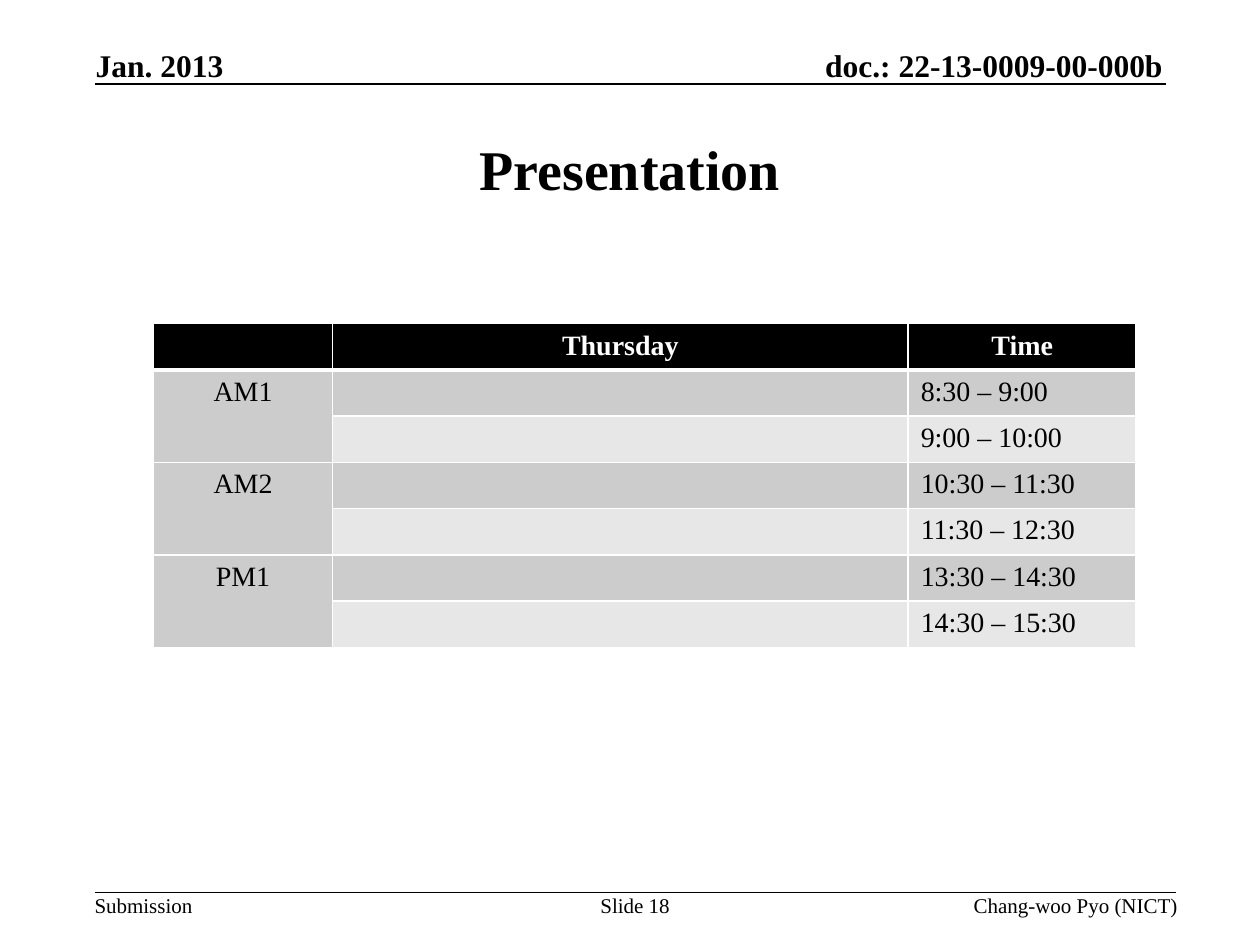
from lxml import etree
from pptx import Presentation
from pptx.dml.color import RGBColor
from pptx.enum.shapes import MSO_CONNECTOR
from pptx.enum.text import MSO_ANCHOR, PP_ALIGN
from pptx.oxml.ns import qn
from pptx.util import Pt

LEFT, MID, RIGHT = PP_ALIGN.LEFT, PP_ALIGN.CENTER, PP_ALIGN.RIGHT
TOP, CENTRE, BOTTOM = MSO_ANCHOR.TOP, MSO_ANCHOR.MIDDLE, MSO_ANCHOR.BOTTOM
LINE = MSO_CONNECTOR.STRAIGHT
FONT, BLACK, WHITE = "Times New Roman", "000000", "FFFFFF"
BANDS = ("CCCCCC", "E7E7E7")

# Content
TITLE = "Presentation"
HEAD = ("", "Thursday", "Time")
SLOTS = [
    ("AM1", ("8:30 – 9:00", "9:00 – 10:00")),
    ("AM2", ("10:30 – 11:30", "11:30 – 12:30")),
    ("PM1", ("13:30 – 14:30", "14:30 – 15:30")),
]
# text, left, top, width, height, size, bold, align, anchor
LABELS = [
    ("Jan. 2013", 54.7, 26.6, 75.6, 21.6, 18, True, LEFT, BOTTOM),
    ("doc.: 22-13-0009-00-000b", 433.4, 26.6, 231.1, 21.6, 18, True, RIGHT, BOTTOM),
    ("Submission", 54, 510, 56.2, 14.4, 12, False, LEFT, TOP),
    ("Slide 18", 342, 510, 41.8, 14.4, 12, False, MID, TOP),
    ("Chang-woo Pyo (NICT)", 555, 510, 118, 14.4, 12, False, RIGHT, TOP),
]
RULES = [(54, 666, 48), (54, 672, 510)]  # left, right, height on page
COLS = (102.2, 329, 130.3)
ROW = 25


def rgb(code):
    return RGBColor.from_string(code)


def style(para, size, color=BLACK, bold=False, align=LEFT):
    para.alignment = align
    for run in para.runs:
        font = run.font
        font.name, font.size, font.bold = FONT, Pt(size), bold
        font.color.rgb = rgb(color)


def edge(cell, side, width):
    props = cell._tc.get_or_add_tcPr()
    line = etree.SubElement(props, qn("a:ln" + side), w=str(Pt(width)))
    fill = etree.SubElement(line, qn("a:solidFill"))
    etree.SubElement(fill, qn("a:srgbClr"), val=WHITE)


def paint(cell, text, row, fill, align):
    for side in "LRTB":
        thick = (row, side) in ((0, "B"), (1, "T"))
        edge(cell, side, 3 if thick else 1)
    cell.fill.solid()
    cell.fill.fore_color.rgb = rgb(fill)
    cell.text = text
    para = cell.text_frame.paragraphs[0]
    style(para, 16, BLACK if row else WHITE, row == 0, align)
    if not text:  # keeps empty cells at the row's text size
        etree.SubElement(para._p, qn("a:endParaRPr"), sz="1600")


deck = Presentation()
deck.slide_width, deck.slide_height = Pt(720), Pt(540)
slide = deck.slides.add_slide(deck.slide_layouts[5])

# Title
title = slide.shapes.title
title.left, title.top, title.width, title.height = Pt(54), Pt(54), Pt(612), Pt(84)
title.text_frame.text = TITLE
title.text_frame.vertical_anchor = CENTRE
style(title.text_frame.paragraphs[0], 32, bold=True, align=MID)

# Header and footer
for text, x, y, w, h, size, bold, align, anchor in LABELS:
    frame = slide.shapes.add_textbox(Pt(x), Pt(y), Pt(w), Pt(h)).text_frame
    frame.margin_left = frame.margin_right = 0
    frame.margin_top = frame.margin_bottom = 0
    frame.word_wrap = False
    frame.vertical_anchor = anchor
    frame.text = text
    style(frame.paragraphs[0], size, bold=bold, align=align)

for x, end, y in RULES:
    rule = slide.shapes.add_connector(LINE, Pt(x), Pt(y), Pt(end), Pt(y))
    rule.line.color.rgb = rgb(BLACK)
    rule.line.width = Pt(1)
    etree.SubElement(rule._element.spPr, qn("a:effectLst"))

# Timetable
count = 1 + sum(len(times) for _, times in SLOTS)
table = slide.shapes.add_table(count, len(COLS), Pt(87.8), Pt(185),
                               Pt(sum(COLS)), Pt(ROW * count)).table
for col, width in zip(table.columns, COLS):
    col.width = Pt(width)
for line in table.rows:
    line.height = Pt(ROW)

for col, text in enumerate(HEAD):
    paint(table.cell(0, col), text, 0, BLACK, MID)

row = 1
for slot, times in SLOTS:
    first = row
    for time, band in zip(times, BANDS):
        paint(table.cell(row, 0), slot if row == first else "", row, BANDS[0], MID)
        paint(table.cell(row, 1), "", row, band, LEFT)
        paint(table.cell(row, 2), time, row, band, LEFT)
        row += 1
    table.cell(first, 0).merge(table.cell(row - 1, 0))

deck.save("out.pptx")
